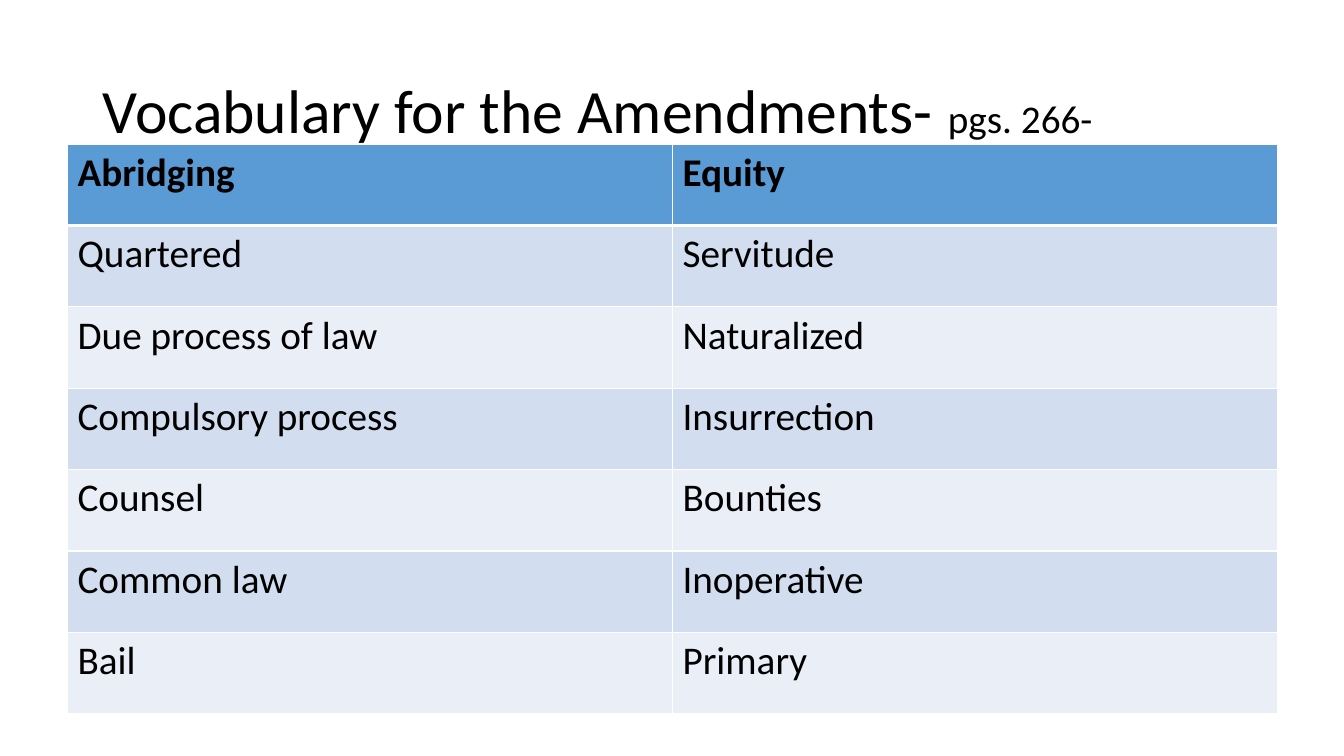
from dataclasses import dataclass

from lxml.etree import SubElement
from pptx import Presentation
from pptx.dml.color import RGBColor as Color
from pptx.enum.text import MSO_ANCHOR as Anchor
from pptx.oxml.ns import qn
from pptx.util import Inches, Pt


@dataclass(frozen=True)
class Theme:
    """Colours, font and type sizes of the slide."""
    font: str = "Calibri"
    text: str = "000000"
    border: str = "FFFFFF"
    header: str = "5B9BD5"
    bands: tuple = ("D2DEEF", "EAEFF7")
    title_size: int = 44
    body_size: int = 28


class SlideBuilder:
    """Draws styled elements on one slide."""

    def __init__(self, slide, theme):
        """Keep the slide and its style."""
        self.slide = slide
        self.theme = theme

    def add_run(self, paragraph, text, size, bold=False):
        """Append one styled run to a paragraph."""
        run = paragraph.add_run()
        run.text = text
        run.font.name = self.theme.font
        run.font.size = Pt(size)
        run.font.bold = bold
        run.font.color.rgb = Color.from_string(self.theme.text)

    def add_title(self, left, top, width, height, pieces):
        """Add a title made of (text, size) pieces."""
        box = self.slide.shapes.add_textbox(
            Inches(left), Inches(top), Inches(width), Inches(height))
        frame = box.text_frame
        frame.word_wrap = True
        frame.vertical_anchor = Anchor.MIDDLE
        paragraph = frame.paragraphs[0]
        paragraph.line_spacing = 0.9
        for text, size in pieces:
            self.add_run(paragraph, text, size)

    def add_border(self, cell, side, points):
        """Draw one solid border of a cell."""
        properties = cell._tc.get_or_add_tcPr()
        line = SubElement(properties, qn(f"a:ln{side}"), w=str(Pt(points)))
        fill = SubElement(line, qn("a:solidFill"))
        SubElement(fill, qn("a:srgbClr"), val=self.theme.border)

    def add_table(self, left, top, width, height, rows):
        """Add a banded table with a bold header row."""
        table = self.slide.shapes.add_table(
            len(rows), len(rows[0]), Inches(left), Inches(top),
            Inches(width), Inches(height)).table
        for row_index, words in enumerate(rows):
            is_header = row_index == 0
            colour = self.theme.header if is_header else self.theme.bands[(row_index - 1) % 2]
            for column_index, word in enumerate(words):
                cell = table.cell(row_index, column_index)
                for side in "LRTB":
                    thick = (is_header and side == "B") or (row_index == 1 and side == "T")
                    self.add_border(cell, side, 3 if thick else 1)
                cell.fill.solid()
                cell.fill.fore_color.rgb = Color.from_string(colour)
                self.add_run(cell.text_frame.paragraphs[0], word, self.theme.body_size, is_header)


VOCABULARY = [
    ("Abridging", "Equity"),
    ("Quartered", "Servitude"),
    ("Due process of law", "Naturalized"),
    ("Compulsory process", "Insurrection"),
    ("Counsel", "Bounties"),
    ("Common law", "Inoperative"),
    ("Bail", "Primary"),
]


def main():
    """Build and save the vocabulary slide."""
    presentation = Presentation()
    presentation.slide_width = Inches(13.33)
    presentation.slide_height = Inches(7.5)
    theme = Theme()
    builder = SlideBuilder(presentation.slides.add_slide(presentation.slide_layouts[6]), theme)
    builder.add_title(0.92, 0.4, 11.5, 1.45, [
        ("Vocabulary for the Amendments- ", theme.title_size),
        ("pgs. 266-", theme.body_size),
    ])
    builder.add_table(0.67, 1.43, 12, 5.65, VOCABULARY)
    presentation.save("out.pptx")


if __name__ == "__main__":
    main()
